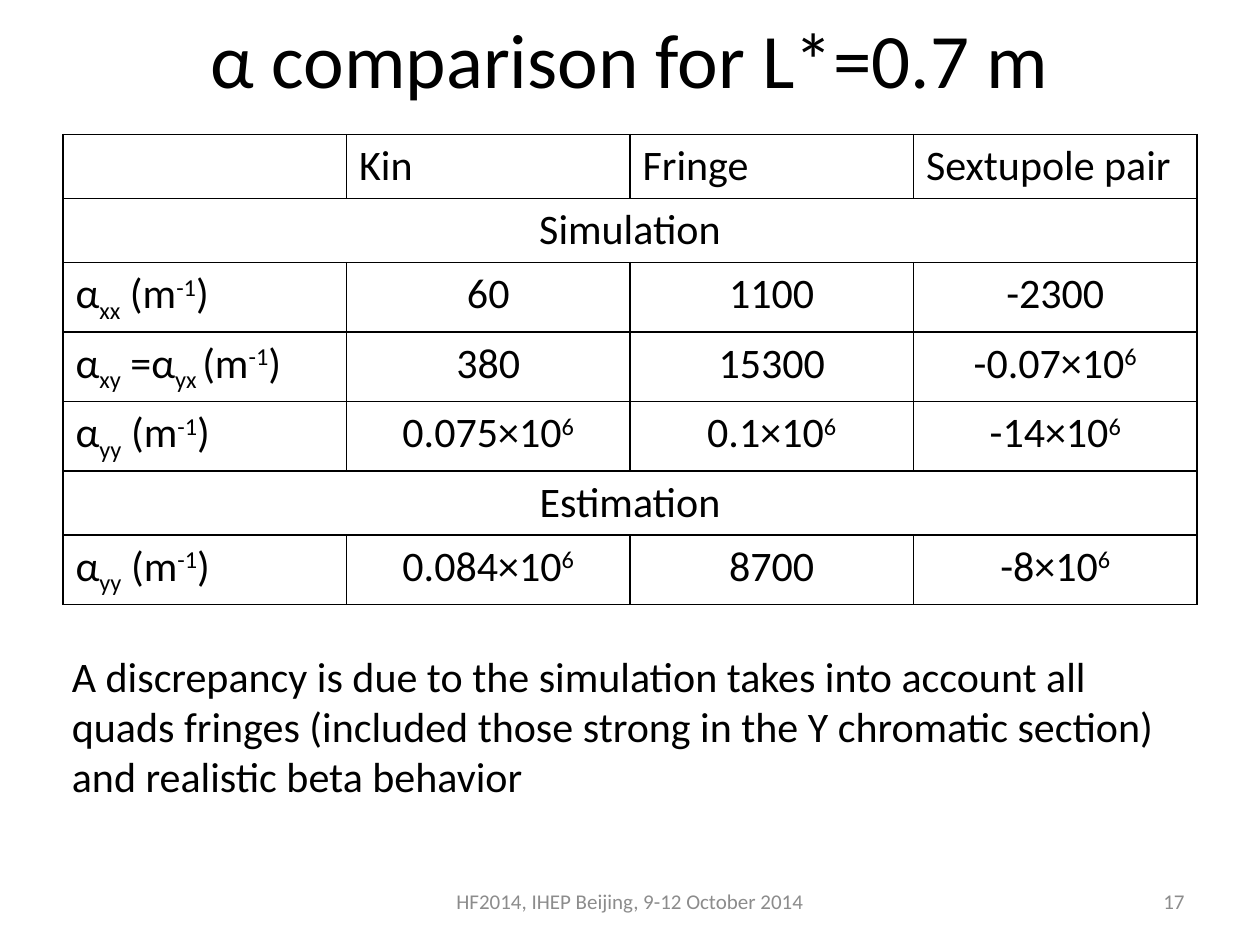
from lxml import etree
from pptx import Presentation
from pptx.dml.color import RGBColor
from pptx.enum import text as t
from pptx.oxml import ns
from pptx.util import Pt

LEFT, CENTER, RIGHT = t.PP_ALIGN.LEFT, t.PP_ALIGN.CENTER, t.PP_ALIGN.RIGHT
BASELINES = {"_": "-25000", "^": "30000"}


def color(value):
    return RGBColor.from_string(value)


class Deck:
    font = "Calibri"
    ink = "000000"
    muted = "8C8C8C"
    body_size = 24

    def __init__(self, width, height):
        self.presentation = Presentation()
        self.presentation.slide_width = Pt(width)
        self.presentation.slide_height = Pt(height)
        self.slide = self.presentation.slides.add_slide(
            self.presentation.slide_layouts[5])

    def format(self, paragraph, size, ink, align):
        paragraph.alignment = align
        for run in paragraph.runs:
            run.font.name = self.font
            run.font.size = Pt(size)
            run.font.color.rgb = color(ink)

    def title(self, wording, left, top, width, height):
        heading = self.slide.shapes.title
        heading.left, heading.top = Pt(left), Pt(top)
        heading.width, heading.height = Pt(width), Pt(height)
        frame = heading.text_frame
        frame.text = wording
        frame.vertical_anchor = t.MSO_ANCHOR.MIDDLE
        self.format(frame.paragraphs[0], 44, self.ink, CENTER)

    def text(self, wording, left, top, width, height, size=body_size,
             ink=ink, align=LEFT, anchor=t.MSO_ANCHOR.TOP):
        frame = self.slide.shapes.add_textbox(
            Pt(left), Pt(top), Pt(width), Pt(height)).text_frame
        frame.word_wrap = True
        frame.vertical_anchor = anchor
        frame.text = wording
        self.format(frame.paragraphs[0], size, ink, align)

    def footer(self, wording, left, width, align):
        self.text(wording, left, 500.5, width, 28.75, 12, self.muted, align,
                  t.MSO_ANCHOR.MIDDLE)

    def script_text(self, paragraph, markup):
        for part in markup.split("|"):
            run = paragraph.add_run()
            baseline = BASELINES.get(part[:1])
            run.text = part[1:] if baseline else part
            if baseline:
                run.font._element.set("baseline", baseline)

    def borders(self, cell):
        properties = cell._tc.get_or_add_tcPr()
        for side in ("lnL", "lnR", "lnT", "lnB"):
            line = etree.SubElement(properties, ns.qn(f"a:{side}"), w=str(Pt(1)))
            fill = etree.SubElement(line, ns.qn("a:solidFill"))
            etree.SubElement(fill, ns.qn("a:srgbClr"), val=self.ink)

    def table(self, rows, left, top, width, row_height):
        columns = len(rows[0])
        grid = self.slide.shapes.add_table(
            len(rows), columns, Pt(left), Pt(top), Pt(width),
            Pt(row_height * len(rows))).table
        grid.first_row = grid.horz_banding = False
        for r, row in enumerate(rows):
            is_section = len(row) == 1
            if is_section:
                grid.cell(r, 0).merge(grid.cell(r, columns - 1))
            for c in range(columns):
                cell = grid.cell(r, c)
                self.borders(cell)
                cell.fill.background()
                if c < len(row) and row[c]:
                    paragraph = cell.text_frame.paragraphs[0]
                    self.script_text(paragraph, row[c])
                    centered = is_section or (r > 0 and c > 0)
                    self.format(paragraph, self.body_size, self.ink,
                                CENTER if centered else LEFT)

    def save(self):
        self.presentation.save("out.pptx")


UNIT = "(m|^-1|)"
ALPHA_YY = "α|_yy| " + UNIT
COEFFICIENTS = [
    ["", "Kin", "Fringe", "Sextupole pair"],
    ["Simulation"],
    ["α|_xx| " + UNIT, "60", "1100", "-2300"],
    ["α|_xy| =α|_yx |" + UNIT, "380", "15300", "-0.07×10|^6"],
    [ALPHA_YY, "0.075×10|^6", "0.1×10|^6", "-14×10|^6"],
    ["Estimation"],
    [ALPHA_YY, "0.084×10|^6", "8700", "-8×10|^6"],
]


def main():
    deck = Deck(720, 540)
    deck.title("α comparison for L*=0.7 m", 36, 0, 648, 66)
    deck.table(COEFFICIENTS, 36, 77, 648, 29.2)
    deck.text("A discrepancy is due to the simulation takes into account all "
              "quads fringes (included those strong in the Y chromatic section) "
              "and realistic beta behavior", 34, 368, 652, 94.5)
    deck.footer("17", 516, 168, RIGHT)
    deck.footer("HF2014, IHEP Beijing, 9-12 October 2014", 246, 228, CENTER)
    deck.save()


if __name__ == "__main__":
    main()
